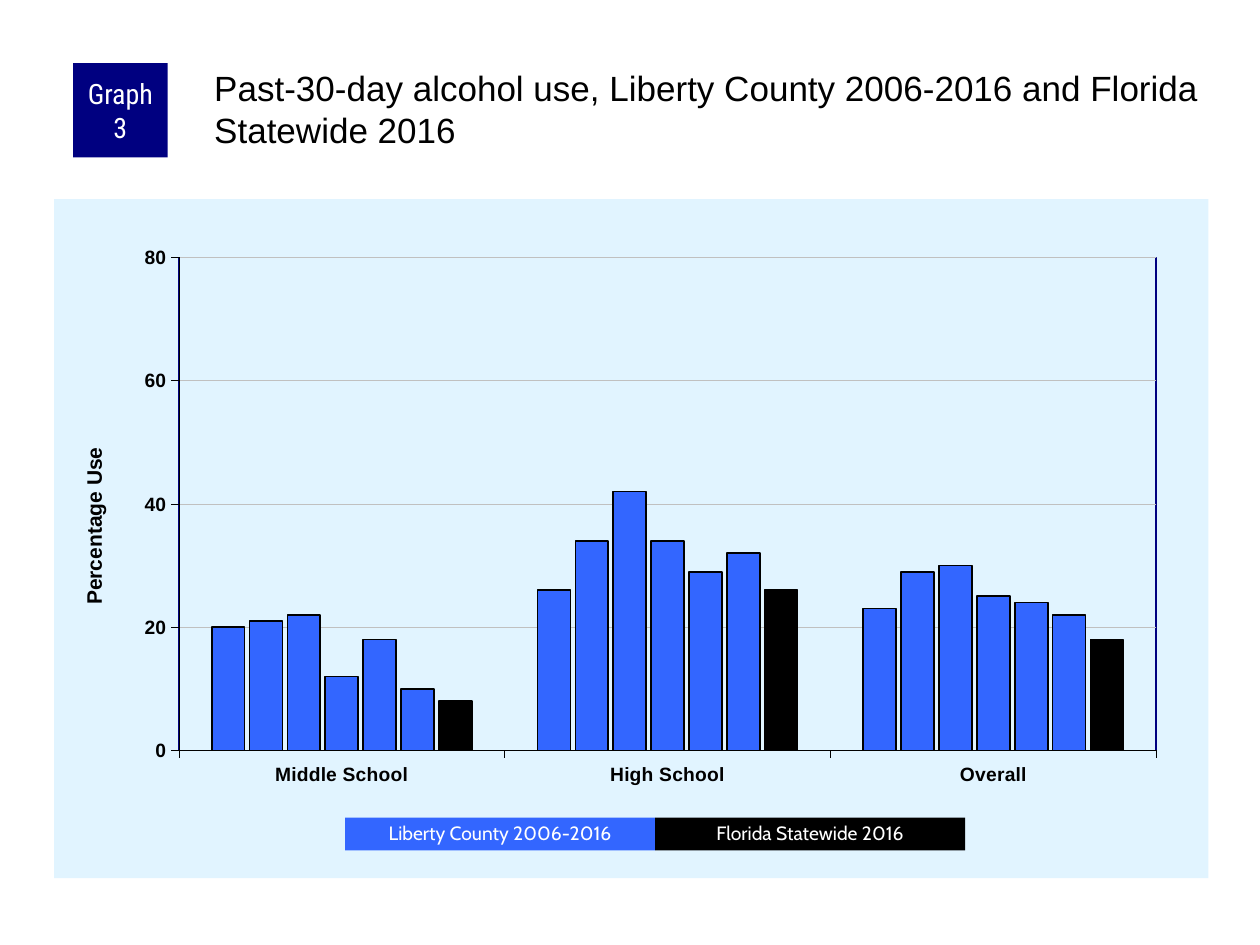
from lxml import etree
from pptx import Presentation
from pptx.chart.data import CategoryChartData
from pptx.dml.color import RGBColor
from pptx.enum.chart import XL_CHART_TYPE as CT, XL_TICK_MARK as TICK
from pptx.enum.shapes import MSO_SHAPE as SHAPE
from pptx.enum.text import MSO_ANCHOR as ANCHOR, PP_ALIGN as ALIGN
from pptx.oxml import parse_xml
from pptx.oxml.ns import nsdecls, qn
from pptx.util import Inches, Pt

COLORS = {"navy": "000080", "black": "000000", "white": "FFFFFF",
          "county": "3366FF", "panel": "E1F4FF", "grid": "C0C0C0"}
COUNTY, STATE = "Liberty County 2006-2016", "Florida Statewide 2016"
CATEGORIES = ["Middle School", "High School", "Overall"]
USE = [(20, 26, 23), (21, 34, 29), (22, 42, 30), (12, 34, 25),
       (18, 29, 24), (10, 32, 22), (8, 26, 18)]


def rgb(name):
    return RGBColor.from_string(COLORS[name])


def style_font(font, size, name="Arial", color="black", bold=False):
    font.size, font.name, font.bold = Pt(size), name, bold
    font.color.rgb = rgb(color)


def style_line(line, color, width):
    line.color.rgb, line.width = rgb(color), Pt(width)


def write(tf, text, align=ALIGN.LEFT, anchor=ANCHOR.TOP, spacing=None,
          insets=(0.1, 0.05, 0.1, 0.05), **font):
    tf.word_wrap, tf.vertical_anchor = True, anchor
    (tf.margin_left, tf.margin_top,
     tf.margin_right, tf.margin_bottom) = map(Inches, insets)
    p = tf.paragraphs[0]
    p.alignment, p.line_spacing = align, spacing
    r = p.add_run()
    r.text = text
    style_font(r.font, **font)


def set_layout(parent, index, **fractions):
    """Give a chart part a manual layout in fractions of the chart."""
    for old in parent.findall(qn("c:layout")):
        parent.remove(old)
    layout = parse_xml(f"<c:layout {nsdecls('c')}><c:manualLayout/></c:layout>")
    for tag, val in fractions.items():
        etree.SubElement(layout[0], qn(f"c:{tag}")).set("val", str(val))
    parent.insert(index, layout)


def shape_props(fill, line):
    return parse_xml(f"<c:spPr {nsdecls('c', 'a')}>{fill}{line}</c:spPr>")


def solid(color):
    return f'<a:solidFill><a:srgbClr val="{COLORS[color]}"/></a:solidFill>'


class SlideBuilder:
    def __init__(self, slide):
        self.shapes = slide.shapes

    def box(self, at, text, fill, **fmt):
        sp = self.shapes.add_shape(SHAPE.RECTANGLE, *map(Inches, at))
        sp.shadow.inherit = False
        sp.fill.solid()
        sp.fill.fore_color.rgb = rgb(fill)
        sp.line.fill.background()
        write(sp.text_frame, text, align=ALIGN.CENTER, anchor=ANCHOR.MIDDLE,
              color="white", **fmt)

    def text(self, at, text, **fmt):
        tb = self.shapes.add_textbox(*map(Inches, at))
        write(tb.text_frame, text, **fmt)

    def column_chart(self, at, categories, rows):
        data = CategoryChartData()
        data.categories = categories
        for n, row in enumerate(rows, 1):
            data.add_series(f"Series {n}", row)
        chart = self.shapes.add_chart(
            CT.COLUMN_CLUSTERED, *map(Inches, at), data).chart
        chart.has_title = chart.has_legend = False
        style_font(chart.font, 8)
        plot = chart.plots[0]
        plot.gap_width, plot.overlap, plot.vary_by_categories = 200, -15, False
        for series in plot.series:
            series.format.fill.solid()
            series.format.fill.fore_color.rgb = rgb("county")
            style_line(series.format.line, "black", 1)
        plot.series[-1].format.fill.fore_color.rgb = rgb("black")
        self.axes(chart)
        self.areas(chart)

    def axes(self, chart):
        for axis in (chart.category_axis, chart.value_axis):
            axis.major_tick_mark, axis.minor_tick_mark = TICK.OUTSIDE, TICK.NONE
            style_font(axis.tick_labels.font, 11, bold=True)
            style_line(axis.format.line, "black", 0.25)
        axis = chart.value_axis
        axis.minimum_scale, axis.maximum_scale, axis.major_unit = 0, 80, 20
        axis.has_major_gridlines = True
        style_line(axis.major_gridlines.format.line, "grid", 0.25)
        title = axis.axis_title
        write_title = title.text_frame.paragraphs[0].add_run()
        write_title.text = "Percentage Use"
        style_font(write_title.font, 12, bold=True)
        title.text_frame._txBody.find(qn("a:bodyPr")).set("rot", "-5400000")
        set_layout(title._element, 1, xMode="edge", yMode="edge", x=0.02, y=0.36)

    def areas(self, chart):
        """Place the plot with its border and fill the chart background."""
        root = chart._chartSpace
        area = root.chart.plotArea
        set_layout(area, 0, layoutTarget="inner", xMode="edge", yMode="edge",
                   x=0.108, y=0.086, w=0.847, h=0.726)
        border = f'<a:ln w="{Pt(1)}">{solid("navy")}</a:ln>'
        area.append(shape_props("<a:noFill/>", border))
        root.chart.addnext(
            shape_props(solid("panel"), "<a:ln><a:noFill/></a:ln>"))


def main():
    prs = Presentation()
    prs.slide_width, prs.slide_height = Inches(10), Inches(7.5)
    s = SlideBuilder(prs.slides.add_slide(prs.slide_layouts[6]))
    s.column_chart((0.43, 1.58, 9.16, 5.39), CATEGORIES, USE)
    s.box((0.58, 0.5, 0.75, 0.75), "Graph 3", "navy", size=16,
          name="Roboto Condensed", insets=(0.05, 0, 0.05, 0))
    s.text((1.67, 0.5, 7.92, 0.83),
           f"Past-30-day alcohol use, {COUNTY.replace(' 2006', ' 2006')} and {STATE}",
           size=20, insets=(0.03, 0.03, 0, 0))
    key_left, key_width = 2.74, 2.46
    for i, (label, fill) in enumerate([(COUNTY, "county"), (STATE, "black")]):
        s.box((key_left + i * key_width, 6.49, key_width, 0.26), label, fill,
              size=11, name="Cabin", spacing=0.9)
    prs.save("out.pptx")


if __name__ == "__main__":
    main()
